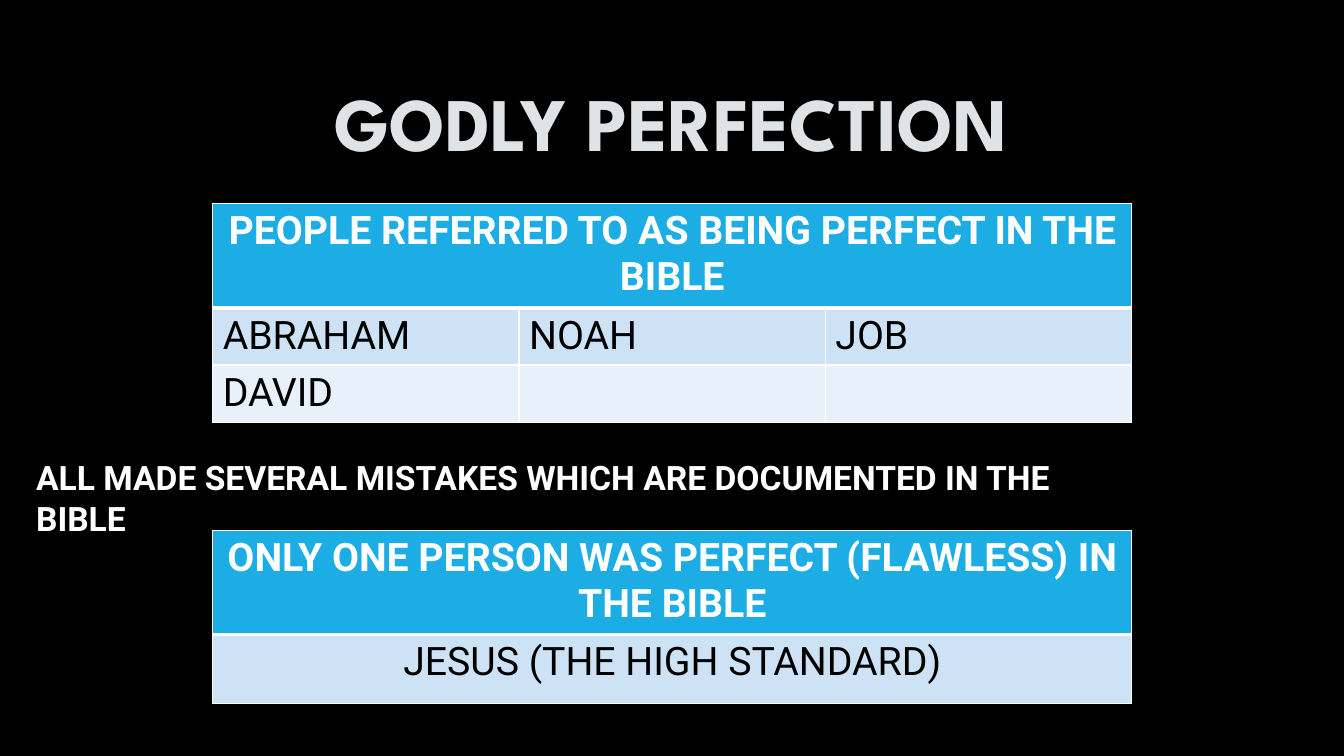
"""Build the Godly Perfection slide with its two tables."""
from lxml import etree
from pptx import Presentation
from pptx.dml.color import RGBColor
from pptx.enum import text
from pptx.oxml import ns
from pptx.util import Cm, Pt

BLACK = RGBColor(0, 0, 0)
WHITE = RGBColor(255, 255, 255)
SILVER = RGBColor(0xDF, 0xE3, 0xE5)
BLUE = RGBColor(0x1C, 0xAD, 0xE4)
BANDS = [BLUE, RGBColor(0xCD, 0xE3, 0xF5), RGBColor(0xE8, 0xF1, 0xFA)]
CENTER = text.PP_ALIGN.CENTER


def style(para, face, size, color, bold, align=None):
    para.alignment = align
    font = para.font
    font.name, font.size, font.bold = face, Pt(size), bold
    font.color.rgb = color


def edge(cell, side, width):
    line = etree.SubElement(cell._tc.get_or_add_tcPr(), ns.qn(f"a:ln{side}"), w=str(Pt(width)))
    fill = etree.SubElement(line, ns.qn("a:solidFill"))
    etree.SubElement(fill, ns.qn("a:srgbClr"), val=str(WHITE))


deck = Presentation()
deck.slide_width, deck.slide_height = Cm(33.87), Cm(19.05)
slide = deck.slides.add_slide(deck.slide_layouts[5])
slide.background.fill.solid()
slide.background.fill.fore_color.rgb = BLACK

title = slide.shapes.title
title.left, title.top, title.width, title.height = Cm(2.54), Cm(1.7), Cm(28.75), Cm(2.7)
title.text_frame.text = "GODLY PERFECTION"
title.text_frame.vertical_anchor = text.MSO_ANCHOR.MIDDLE
style(title.text_frame.paragraphs[0], "League Spartan", 54, SILVER, True, CENTER)

note = slide.shapes.add_textbox(Cm(0.66), Cm(11.4), Cm(26.8), Cm(1.27)).text_frame
note.word_wrap = True
note.text = "ALL MADE SEVERAL MISTAKES WHICH ARE DOCUMENTED IN THE BIBLE"
style(note.paragraphs[0], "Roboto", 24, WHITE, True)

TABLES = [
    (5.13, [2.58, 1.42, 1.42], [
        ["PEOPLE REFERRED TO AS BEING PERFECT IN THE BIBLE", "", ""],
        ["ABRAHAM", "NOAH", "JOB"],
        ["DAVID", "", ""]]),
    (13.36, [2.6, 1.75], [
        ["ONLY ONE PERSON WAS PERFECT (FLAWLESS) IN THE BIBLE"],
        ["JESUS (THE HIGH STANDARD)"]]),
]
for top, heights, rows in TABLES:
    count = len(rows[0])
    table = slide.shapes.add_table(
        len(rows), count, Cm(5.36), Cm(top), Cm(23.16), Cm(sum(heights))).table
    for r, row in enumerate(rows):
        table.rows[r].height = Cm(heights[r])
        head = r == 0
        for c, words in enumerate(row):
            cell = table.cell(r, c)
            cell.text = words
            align = CENTER if head or count == 1 else None
            style(cell.text_frame.paragraphs[0], "Roboto", 28,
                  WHITE if head else BLACK, head, align)
            for side, width in zip("LRTB", [1, 1, 3 if r == 1 else 1, 3 if head else 1]):
                edge(cell, side, width)
            cell.fill.solid()
            cell.fill.fore_color.rgb = BANDS[r]
    if count > 1:
        table.cell(0, 0).merge(table.cell(0, count - 1))

deck.save("out.pptx")
